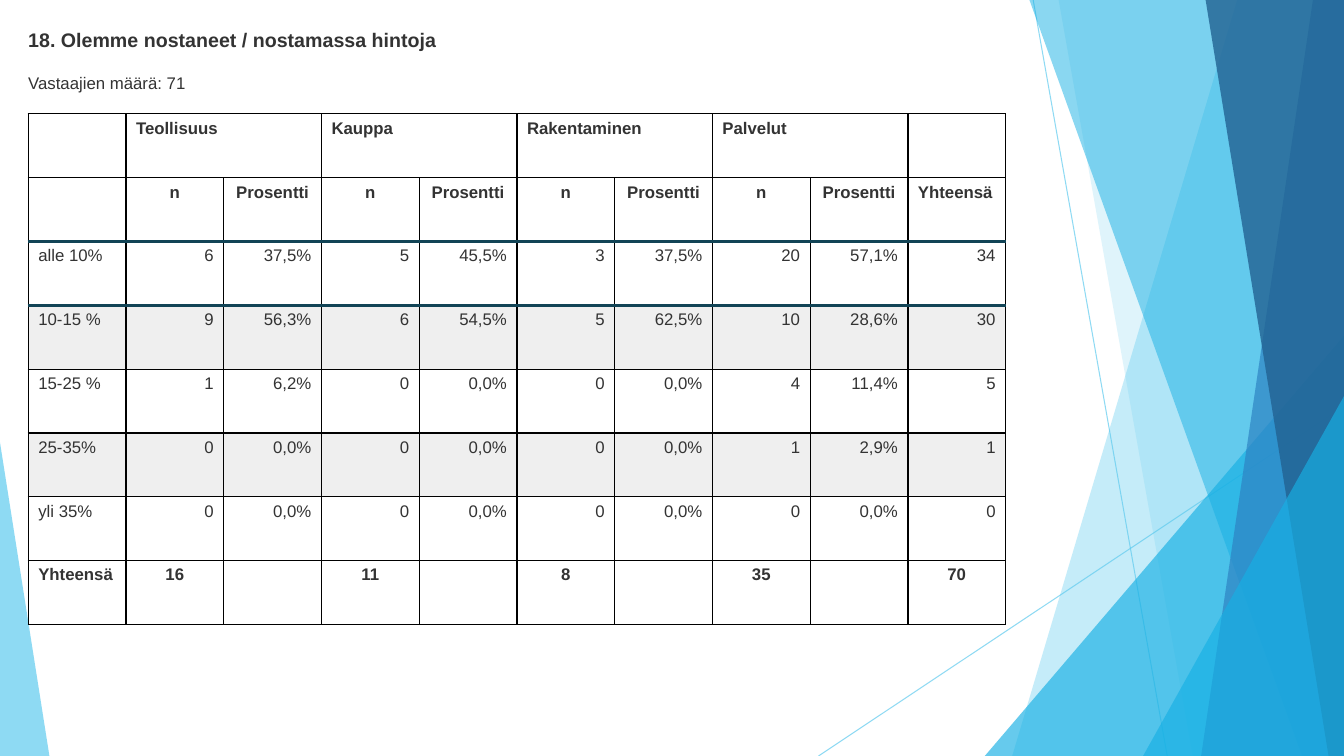
from dataclasses import dataclass

from lxml import etree
from pptx import Presentation
from pptx.dml.color import RGBColor
from pptx.enum import shapes, text
from pptx.oxml import ns
from pptx.util import Pt


@dataclass(frozen=True)
class Theme:
    font: str = "Arial"
    title_size: int = 14
    body_size: int = 12
    ink: str = "333333"
    grid: str = "000000"
    rule: str = "124456"
    band: str = "EFEFEF"
    sky: str = "5FCBEF"
    cyan: str = "17B0E4"
    blue: str = "2E83C3"
    navy: str = "226292"


THEME = Theme()
WIDTH, HEIGHT = 960, 540
MARGIN = 20.16


def style_text(frame, size, bold=False, align=text.PP_ALIGN.LEFT):
    for paragraph in frame.paragraphs:
        paragraph.alignment = align
        for run in paragraph.runs:
            run.font.name = THEME.font
            run.font.size = Pt(size)
            run.font.bold = bold
            run.font.color.rgb = RGBColor.from_string(THEME.ink)


def set_alpha(paint, percent):
    """Give the solid colour inside an XML element its opacity."""
    color = next(paint.iter(ns.qn("a:srgbClr")))
    etree.SubElement(color, ns.qn("a:alpha"), val=str(percent * 1000))


prs = Presentation()
prs.slide_width, prs.slide_height = Pt(WIDTH), Pt(HEIGHT)
slide = prs.slides.add_slide(prs.slide_layouts[5])

# Background rays
for x1, y1, x2, y2 in [(738, 0, 833.76, HEIGHT), (WIDTH, 290.16, 584.64, HEIGHT)]:
    ray = slide.shapes.add_connector(
        shapes.MSO_CONNECTOR.STRAIGHT, Pt(x1), Pt(y1), Pt(x2), Pt(y2))
    ray.line.color.rgb = RGBColor.from_string(THEME.sky)
    ray.line.width = Pt(0.75)
    properties = ray._element.spPr
    set_alpha(properties, 70)
    etree.SubElement(properties, ns.qn("a:effectLst"))

# Background facets: a sheet reaches the right edge from its top and bottom x,
# a wedge stands on the bottom edge with its left, top, width and apex side
facets = [
    ("sheet", (884.16, 722.88), THEME.sky, 36),
    ("sheet", (756, 851.76), THEME.sky, 20),
    ("wedge", (703.44, 239.76, 256.56, 1), THEME.cyan, 66),
    ("sheet", (735.12, 929.52), THEME.cyan, 50),
    ("sheet", (938.16, 858.24), THEME.blue, 70),
    ("sheet", (861.12, 948.96), THEME.navy, 80),
    ("wedge", (816.48, 282.96, 143.52, 1), THEME.cyan, 66),
    ("wedge", (0, 316.08, 35.28, 0), THEME.sky, 70),
]
for kind, geometry, color, opacity in facets:
    if kind == "sheet":
        top_x, bottom_x = geometry
        outline = slide.shapes.build_freeform(top_x, -0.6, scale=Pt(1))
        outline.add_line_segments([(WIDTH, -0.6), (WIDTH, HEIGHT), (bottom_x, HEIGHT)])
        facet = outline.convert_to_shape()
    else:
        left, top, width, apex = geometry
        facet = slide.shapes.add_shape(
            shapes.MSO_SHAPE.ISOSCELES_TRIANGLE,
            Pt(left), Pt(top), Pt(width), Pt(HEIGHT - top))
        facet.adjustments[0] = apex
    facet.shadow.inherit = False
    facet.line.fill.background()
    facet.fill.solid()
    facet.fill.fore_color.rgb = RGBColor.from_string(color)
    set_alpha(facet._element.spPr, opacity)

# Heading and respondent count
heading = slide.shapes.title
respondents = slide.shapes.add_textbox(0, 0, 0, 0)
captions = [
    (heading, "18. Olemme nostaneet / nostamassa hintoja", 20.16, 16.56, THEME.title_size, True),
    (respondents, "Vastaajien määrä: 71", 51.84, 14.4, THEME.body_size, False),
]
for caption, wording, top, height, size, bold in captions:
    caption.left, caption.top = Pt(MARGIN), Pt(top)
    caption.width, caption.height = Pt(WIDTH - 2 * MARGIN), Pt(height)
    frame = caption.text_frame
    frame.text = wording
    frame.word_wrap = True
    frame.auto_size = text.MSO_AUTO_SIZE.SHAPE_TO_FIT_TEXT
    frame.vertical_anchor = text.MSO_ANCHOR.TOP
    frame.margin_left = frame.margin_top = frame.margin_right = frame.margin_bottom = 0
    style_text(frame, size, bold)

# Price increases by industry
rows = [
    ["", "Teollisuus", "", "Kauppa", "", "Rakentaminen", "", "Palvelut", "", ""],
    [""] + ["n", "Prosentti"] * 4 + ["Yhteensä"],
    ["alle 10%", "6", "37,5%", "5", "45,5%", "3", "37,5%", "20", "57,1%", "34"],
    ["10-15 %", "9", "56,3%", "6", "54,5%", "5", "62,5%", "10", "28,6%", "30"],
    ["15-25 %", "1", "6,2%", "0", "0,0%", "0", "0,0%", "4", "11,4%", "5"],
    ["25-35%", "0", "0,0%", "0", "0,0%", "0", "0,0%", "1", "2,9%", "1"],
    ["yli 35%", "0", "0,0%", "0", "0,0%", "0", "0,0%", "0", "0,0%", "0"],
    ["Yhteensä", "16", "", "11", "", "8", "", "35", "", "70"],
]
COLUMN, ROW = 69.84, 45.6
last_row, last_col = len(rows) - 1, len(rows[0]) - 1
table = slide.shapes.add_table(
    len(rows), len(rows[0]), Pt(MARGIN), Pt(81.36),
    Pt(COLUMN * len(rows[0])), Pt(ROW * len(rows))).table
table.first_row = table.horz_banding = False
for column in table.columns:
    column.width = Pt(COLUMN)
for row in table.rows:
    row.height = Pt(ROW)
for c in range(1, last_col, 2):
    table.cell(0, c).merge(table.cell(0, c + 1))

for r, row in enumerate(rows):
    for c, value in enumerate(row):
        cell = table.cell(r, c)
        if value:
            cell.text_frame.text = value
        if c == 0 or r == 0 or (r, c) == (1, last_col):
            align = text.PP_ALIGN.LEFT
        elif r in (1, last_row):
            align = text.PP_ALIGN.CENTER
        else:
            align = text.PP_ALIGN.RIGHT
        style_text(cell.text_frame, THEME.body_size, r in (0, 1, last_row), align)

        # The first answer row lies between two heavy rules
        heavy_sides = {1: "B", 2: "TB", 3: "T"}.get(r, "")
        cell_properties = cell._tc.get_or_add_tcPr()
        for side in "LRTB":
            heavy = side in heavy_sides
            border = etree.SubElement(
                cell_properties, ns.qn(f"a:ln{side}"), w=str(Pt(2 if heavy else 1)))
            paint = etree.SubElement(border, ns.qn("a:solidFill"))
            etree.SubElement(
                paint, ns.qn("a:srgbClr"), val=THEME.rule if heavy else THEME.grid)
        if r in (3, 5):
            cell.fill.solid()
            cell.fill.fore_color.rgb = RGBColor.from_string(THEME.band)
        else:
            cell.fill.background()

prs.save("out.pptx")
